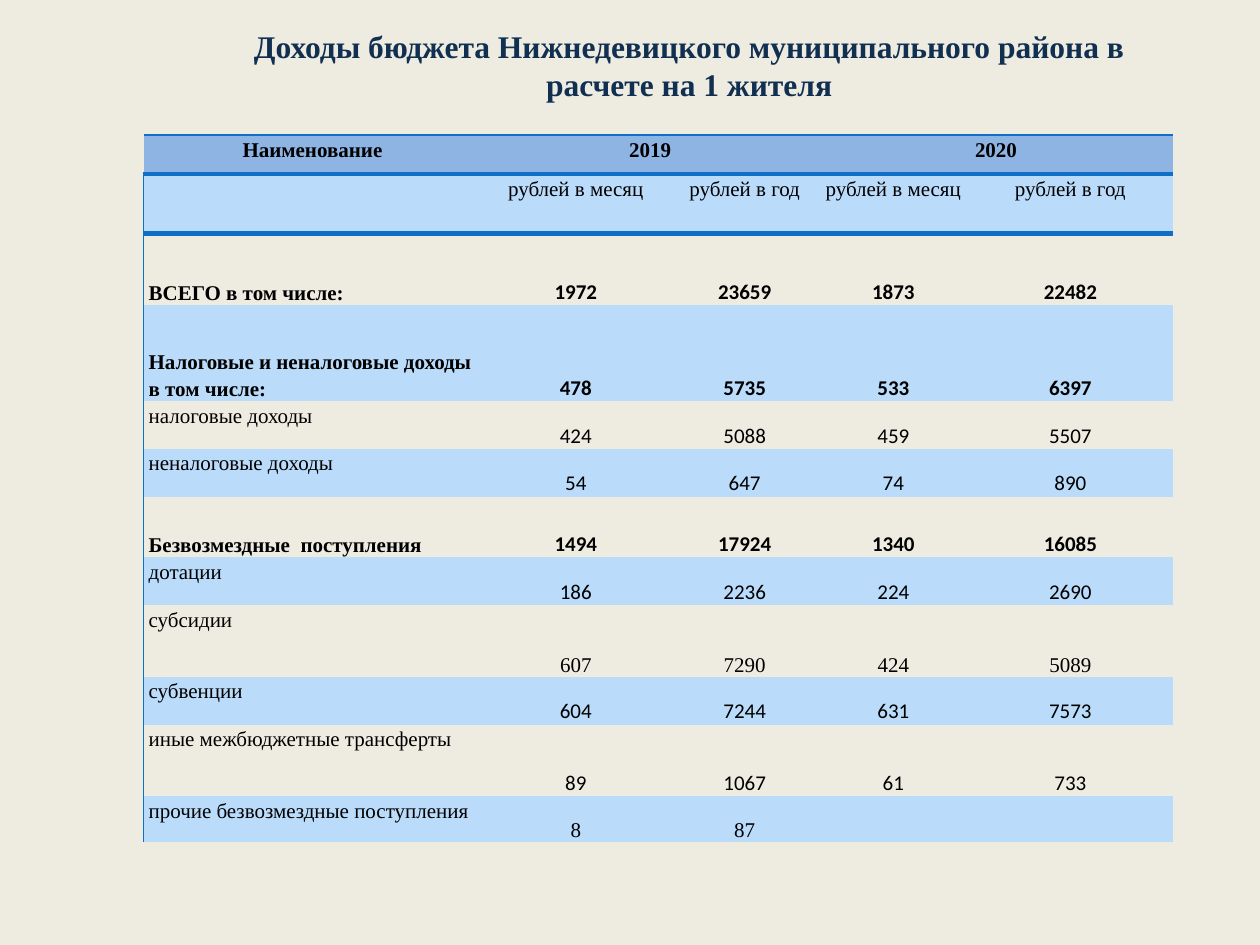
from lxml import etree
from pptx import Presentation
from pptx import util as u
from pptx.dml.color import RGBColor
from pptx.enum import text
from pptx.oxml import ns

WIDTH, HEIGHT = 10, 7.5
SERIF, SANS = "Times New Roman", "Calibri"
PAPER, HEADER, BAND, RULE = "EEECE1", "8EB4E3", "BADBF9", "0F6FC6"
NO_GRID_STYLE = "{2D5ABB26-0587-4C30-8999-92F81FD0307C}"
TOP, BOTTOM = text.MSO_ANCHOR.TOP, text.MSO_ANCHOR.BOTTOM
LEFT, CENTER = text.PP_ALIGN.LEFT, text.PP_ALIGN.CENTER

COLUMNS = [2.68, 1.5, 1.18, 1.18, 1.63]
HEADER_ROWS = [
    (0.31, ["Наименование", "2019", "", "2020", ""]),
    (0.47, ["", "рублей в месяц", "рублей в год", "рублей в месяц", "рублей в год"]),
]
# height, bold, font of the figures, label, figures
INCOME_ROWS = [
    (0.57, True, SANS, "ВСЕГО в том числе:", [1972, 23659, 1873, 22482]),
    (0.76, True, SANS, "Налоговые и неналоговые доходы в том числе:", [478, 5735, 533, 6397]),
    (0.38, False, SANS, "налоговые доходы", [424, 5088, 459, 5507]),
    (0.38, False, SANS, "неналоговые доходы", [54, 647, 74, 890]),
    (0.48, True, SANS, "Безвозмездные  поступления", [1494, 17924, 1340, 16085]),
    (0.38, False, SANS, "дотации", [186, 2236, 224, 2690]),
    (0.57, False, SERIF, "субсидии", [607, 7290, 424, 5089]),
    (0.38, False, SANS, "субвенции", [604, 7244, 631, 7573]),
    (0.57, False, SANS, "иные межбюджетные трансферты", [89, 1067, 61, 733]),
    (0.36, False, SERIF, "прочие безвозмездные поступления", [8, 87, "", ""]),
]


def rgb(value):
    return RGBColor.from_string(value)


def write(tf, content, size=12, font=SERIF, color="000000", bold=False,
          align=CENTER, spacing=None):
    p = tf.paragraphs[0]
    p.alignment = align
    if spacing:
        p.line_spacing = spacing
    r = p.add_run()
    r.text = content
    r.font.size, r.font.name, r.font.bold = u.Pt(size), font, bold
    r.font.color.rgb = rgb(color)


def add_border(cell, side, points):
    ln = etree.SubElement(cell._tc.get_or_add_tcPr(), ns.qn(f"a:ln{side}"),
                          w=str(u.Pt(points)))
    fill = etree.SubElement(ln, ns.qn("a:solidFill"))
    etree.SubElement(fill, ns.qn("a:srgbClr"), val=RULE)


def style_cell(cell, content, fill, borders, anchor=TOP, **fmt):
    cell.margin_left = cell.margin_right = u.Inches(0.04)
    cell.margin_top = cell.margin_bottom = 0
    cell.vertical_anchor = anchor
    for side, points in borders:
        add_border(cell, side, points)
    if fill:
        cell.fill.solid()
        cell.fill.fore_color.rgb = rgb(fill)
    else:
        cell.fill.background()
    if content:
        write(cell.text_frame, content, spacing=1.15, **fmt)


def fill_header(table):
    for c, content in enumerate(HEADER_ROWS[0][1]):
        style_cell(table.cell(0, c), content, HEADER, [("T", 1), ("B", 3)], bold=True)
    for c, content in enumerate(HEADER_ROWS[1][1]):
        borders = [("T", 3)] if c else [("L", 1), ("T", 3)]
        style_cell(table.cell(1, c), content, BAND, borders)
    for c in (1, 3):
        table.cell(0, c).merge(table.cell(0, c + 1))


def fill_income(table):
    for i, (_, bold, font, label, figures) in enumerate(INCOME_ROWS):
        row, fill = i + len(HEADER_ROWS), BAND if i % 2 else None
        style_cell(table.cell(row, 0), label, fill, [("L", 1)],
                   anchor=BOTTOM if bold else TOP, bold=bold, align=LEFT)
        for c, figure in enumerate(figures, 1):
            style_cell(table.cell(row, c), str(figure), fill, [],
                       anchor=BOTTOM, bold=bold, font=font)


def add_income_table(s, left, top):
    heights = [row[0] for row in HEADER_ROWS + INCOME_ROWS]
    box = [u.Inches(v) for v in (left, top, sum(COLUMNS), sum(heights))]
    table = s.shapes.add_table(len(heights), len(COLUMNS), *box).table
    table._tbl.tblPr.find(ns.qn("a:tableStyleId")).text = NO_GRID_STYLE
    table.horz_banding = False
    for column, width in zip(table.columns, COLUMNS):
        column.width = u.Inches(width)
    for row, height in zip(table.rows, heights):
        row.height = u.Inches(height)
    fill_header(table)
    fill_income(table)


def add_title(s, *box):
    tf = s.shapes.add_textbox(*[u.Inches(v) for v in box]).text_frame
    tf.word_wrap = True
    tf.auto_size = text.MSO_AUTO_SIZE.SHAPE_TO_FIT_TEXT
    tf.vertical_anchor = text.MSO_ANCHOR.MIDDLE
    write(tf, "Доходы бюджета Нижнедевицкого муниципального района в расчете на 1 жителя",
          size=18, color="112F51", bold=True)


def main():
    prs = Presentation()
    prs.slide_width, prs.slide_height = u.Inches(WIDTH), u.Inches(HEIGHT)
    s = prs.slides.add_slide(prs.slide_layouts[6])
    s.background.fill.solid()
    s.background.fill.fore_color.rgb = rgb(PAPER)
    add_income_table(s, 0.114 * WIDTH, 0.143 * HEIGHT)
    add_title(s, 0.153 * WIDTH, 0.021 * HEIGHT, 0.788 * WIDTH, 0.095 * HEIGHT)
    prs.save("out.pptx")


if __name__ == "__main__":
    main()
